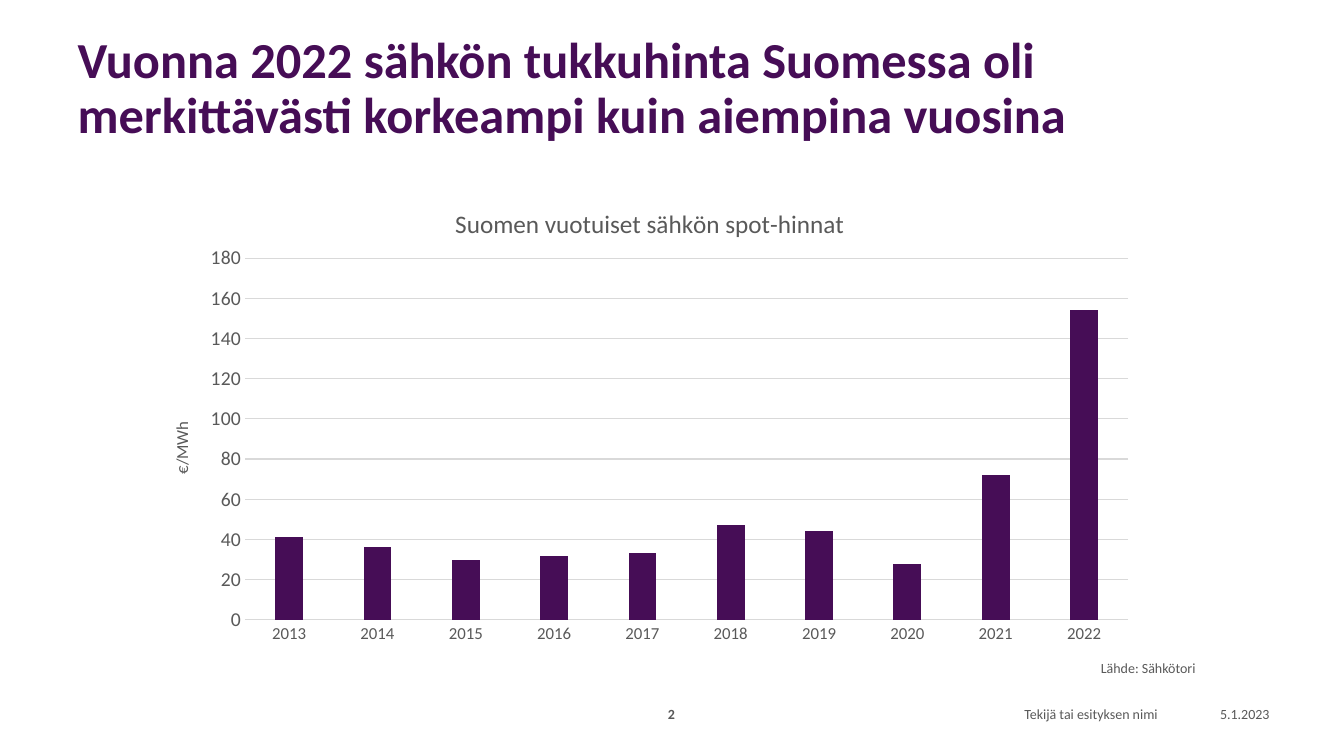
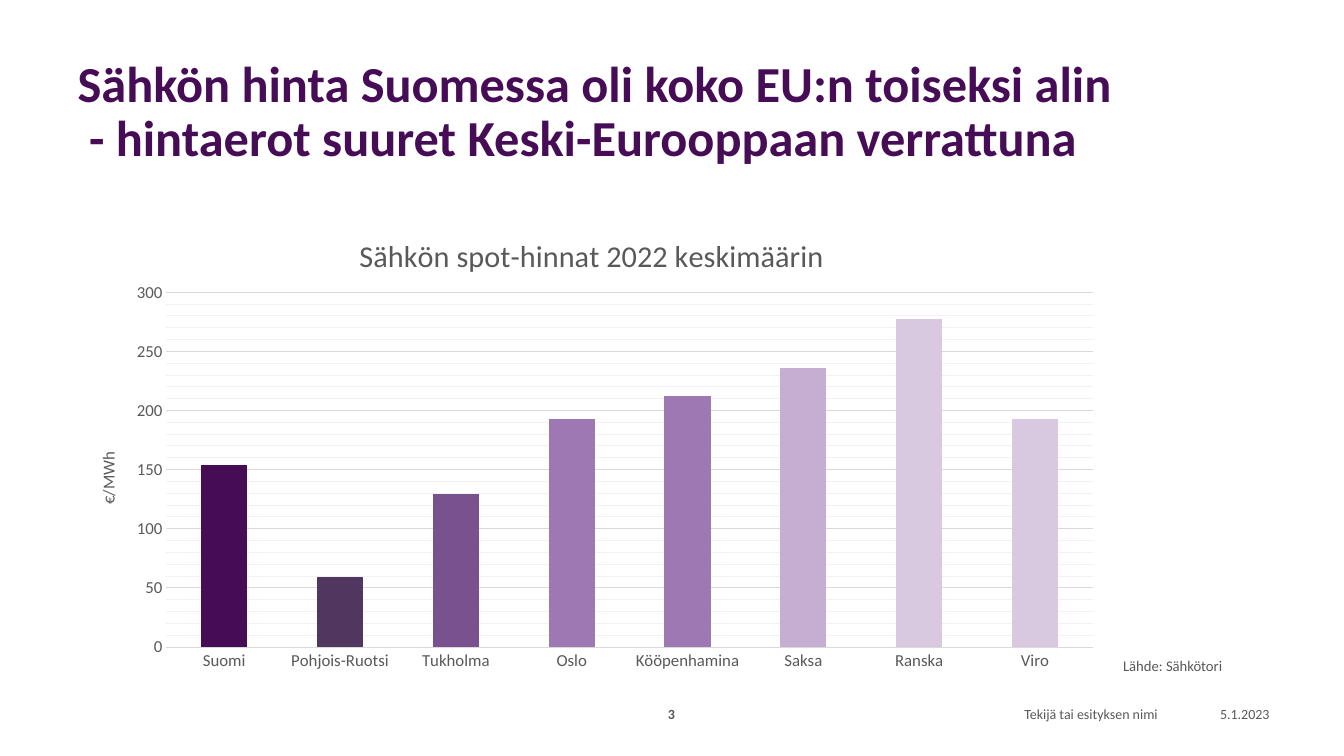
from lxml.etree import SubElement
from pptx import Presentation
from pptx.chart.data import CategoryChartData
from pptx.dml.color import RGBColor
from pptx.enum.chart import XL_CHART_TYPE, XL_TICK_MARK
from pptx.enum.text import MSO_ANCHOR, MSO_AUTO_SIZE, PP_ALIGN
from pptx.oxml.ns import qn
from pptx.util import Inches, Pt

# Shared style
FONT = "Calibri"
PURPLE, GREY, GRID, MINOR_GRID = "460D56", "595959", "D9D9D9", "F2F2F2"
TITLE_LEFT, TITLE_TOP = 0.67, 0.4
FOOTER_TOP, FOOTER_HEIGHT = 6.95, 0.27
AUTHOR, DATE = "Tekijä tai esityksen nimi", "5.1.2023"
SOURCE, UNIT = "Lähde: Sähkötori", "€/MWh"

# Content: every box is left, top, width, height in inches on the slide
SLIDES = [
    {
        "title": "Vuonna 2022 sähkön tukkuhinta Suomessa oli "
                 "merkittävästi korkeampi kuin aiempina vuosina",
        "title_size": (11.32, 0.98),
        "page": "2",
        "source_box": (10.82, 6.49, 1.52, 0.27), "source_points": 10,
        "chart": {
            "kind": XL_CHART_TYPE.COLUMN_CLUSTERED,
            "box": (1.42, 1.74, 9.97, 4.74),
            "plot_box": (2.43, 2.56, 8.76, 3.59),
            "heading": "Suomen vuotuiset sähkön spot-hinnat",
            "heading_at": (4.47, 2.0), "heading_points": 18,
            "unit_at": (1.66, 4.15),
            "value_points": 14, "maximum": 180, "step": 20,
            "gap": 219, "overlap": -27,
            "prices": {"2013": 41, "2014": 36, "2015": 30, "2016": 32, "2017": 33,
                       "2018": 47, "2019": 44, "2020": 28, "2021": 72, "2022": 154},
        },
    },
    {
        "title": "Sähkön hinta Suomessa oli koko EU:n toiseksi alin\n"
                 " - hintaerot suuret Keski-Eurooppaan verrattuna",
        "title_size": (11.46, 1.45),
        "page": "3",
        "source_box": (11.04, 6.47, 1.31, 0.29), "source_points": 10.5,
        "chart": {
            "kind": XL_CHART_TYPE.COLUMN_STACKED,
            "box": (0.67, 2, 10.37, 4.76),
            "plot_box": (1.65, 2.9, 9.19, 3.52),
            "heading": "Sähkön spot-hinnat 2022 keskimäärin",
            "heading_at": (3.51, 2.27), "heading_points": 21.6,
            "unit_at": (0.93, 4.45),
            "value_points": 12, "maximum": 300, "step": 50, "minor_step": 10,
            "gap": 150, "overlap": 100,
            "prices": {"Suomi": 154, "Pohjois-Ruotsi": 59, "Tukholma": 129,
                       "Oslo": 193, "Kööpenhamina": 212, "Saksa": 236,
                       "Ranska": 277, "Viro": 193},
            "colors": [PURPLE, "51365F", "79518E", "9E78B2", "9E78B2",
                       "C5AED1", "D8C9E0", "D8C9E0"],
        },
    },
]


def color(value):
    return RGBColor.from_string(value)


def style_font(font, points, value=GREY, bold=False):
    font.name, font.size, font.bold = FONT, Pt(points), bold
    font.color.rgb = color(value)


def write(frame, text, points=10, value=GREY, bold=False, align=PP_ALIGN.LEFT,
          anchor=MSO_ANCHOR.TOP, spacing=None):
    frame.word_wrap = True
    frame.auto_size = MSO_AUTO_SIZE.NONE
    frame.vertical_anchor = anchor
    para = frame.paragraphs[0]
    para.text = text
    para.alignment, para.line_spacing = align, spacing
    for span in para.runs:
        style_font(span.font, points, value, bold)


def add_text(page, box, text, **style):
    shape = page.shapes.add_textbox(*map(Inches, box))
    write(shape.text_frame, text, **style)


def add_title(page, text, size):
    title = page.shapes.title
    title.left, title.top = Inches(TITLE_LEFT), Inches(TITLE_TOP)
    title.width, title.height = map(Inches, size)
    write(title.text_frame, text, points=36, value=PURPLE, bold=True,
          anchor=MSO_ANCHOR.MIDDLE, spacing=0.9)


def add_footer(page, number):
    for left, width, text, align, bold in (
        (11.58, 1.11, DATE, PP_ALIGN.RIGHT, False),
        (7.41, 4.17, AUTHOR, PP_ALIGN.RIGHT, False),
        (6.36, 0.6, number, PP_ALIGN.CENTER, True),
    ):
        add_text(page, (left, FOOTER_TOP, width, FOOTER_HEIGHT), text,
                 align=align, bold=bold, anchor=MSO_ANCHOR.MIDDLE)


def place(element, index, box, chart_box):
    """Give a chart part a fixed place, as fractions of the chart."""
    for old in element.findall(qn("c:layout")):
        element.remove(old)
    layout = SubElement(element, qn("c:layout"))
    element.insert(index, layout)
    manual = SubElement(layout, qn("c:manualLayout"))
    left, top, width, height = chart_box
    settings = [("xMode", "edge"), ("yMode", "edge"),
                ("x", (box[0] - left) / width), ("y", (box[1] - top) / height)]
    if len(box) == 4:
        settings.insert(0, ("layoutTarget", "inner"))
        settings += [("w", box[2] / width), ("h", box[3] / height)]
    for name, value in settings:
        SubElement(manual, qn("c:" + name)).set("val", str(value))


def write_chart_title(title, text, points, at, chart_box):
    frame = title.text_frame
    frame.text = text
    style_font(frame.paragraphs[0].runs[0].font, points)
    place(title._element, 1, at, chart_box)


def style_line(line, value):
    line.color.rgb = color(value)
    line.width = Pt(0.75)


def add_minor_gridlines(axis, step, value):
    axis.minor_unit = step
    axis.has_minor_gridlines = True
    element = axis._element.find(qn("c:minorGridlines"))
    line = SubElement(SubElement(element, qn("c:spPr")), qn("a:ln"), w=str(Pt(0.75)))
    SubElement(SubElement(line, qn("a:solidFill")), qn("a:srgbClr"), val=value)


def style_axis(axis, points):
    axis.major_tick_mark = axis.minor_tick_mark = XL_TICK_MARK.NONE
    style_font(axis.tick_labels.font, points)


def add_price_chart(page, info):
    data = CategoryChartData()
    data.categories = list(info["prices"])
    data.add_series("Series 1", list(info["prices"].values()))
    box = info["box"]
    chart = page.shapes.add_chart(info["kind"], *map(Inches, box), data).chart
    style_font(chart.font, 10, "000000")
    chart.has_legend = False
    chart.has_title = True
    write_chart_title(chart.chart_title, info["heading"], info["heading_points"],
                      info["heading_at"], box)
    place(chart._chartSpace.find(".//" + qn("c:plotArea")), 0, info["plot_box"], box)

    # Axes
    style_axis(chart.category_axis, 12)
    style_line(chart.category_axis.format.line, GRID)
    prices = chart.value_axis
    style_axis(prices, info["value_points"])
    prices.format.line.fill.background()
    prices.minimum_scale, prices.maximum_scale = 0, info["maximum"]
    prices.major_unit = info["step"]
    prices.has_major_gridlines = True
    style_line(prices.major_gridlines.format.line, GRID)
    if "minor_step" in info:
        add_minor_gridlines(prices, info["minor_step"], MINOR_GRID)
    prices.has_title = True
    write_chart_title(prices.axis_title, UNIT, 12, info["unit_at"], box)
    body = prices.axis_title._element.find(".//" + qn("a:bodyPr"))
    body.set("rot", "-5400000")
    body.set("vert", "horz")

    # Columns
    plot = chart.plots[0]
    plot.vary_by_categories = False
    plot.gap_width, plot.overlap = info["gap"], info["overlap"]
    columns = plot.series[0]
    columns.invert_if_negative = False
    columns.format.fill.solid()
    columns.format.fill.fore_color.rgb = color(PURPLE)
    for index, value in enumerate(info.get("colors", [])):
        fill = columns.points[index].format.fill
        fill.solid()
        fill.fore_color.rgb = color(value)


def main():
    deck = Presentation()
    deck.slide_width, deck.slide_height = Inches(13.33), Inches(7.5)
    title_only = deck.slide_layouts[5]
    for info in SLIDES:
        page = deck.slides.add_slide(title_only)
        add_title(page, info["title"], info["title_size"])
        add_footer(page, info["page"])
        add_price_chart(page, info["chart"])
        add_text(page, info["source_box"], SOURCE, points=info["source_points"])
    deck.save("out.pptx")


if __name__ == "__main__":
    main()
